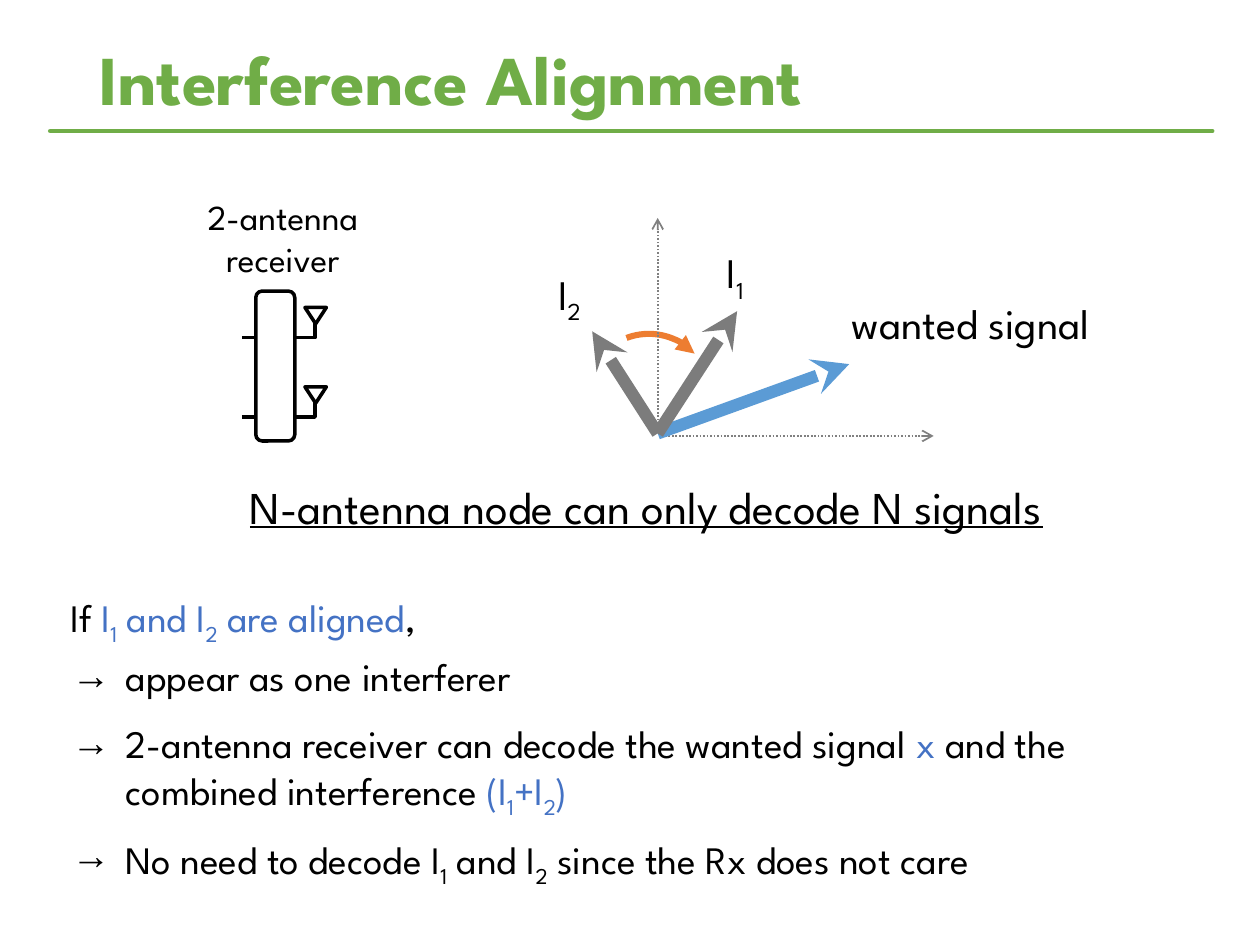
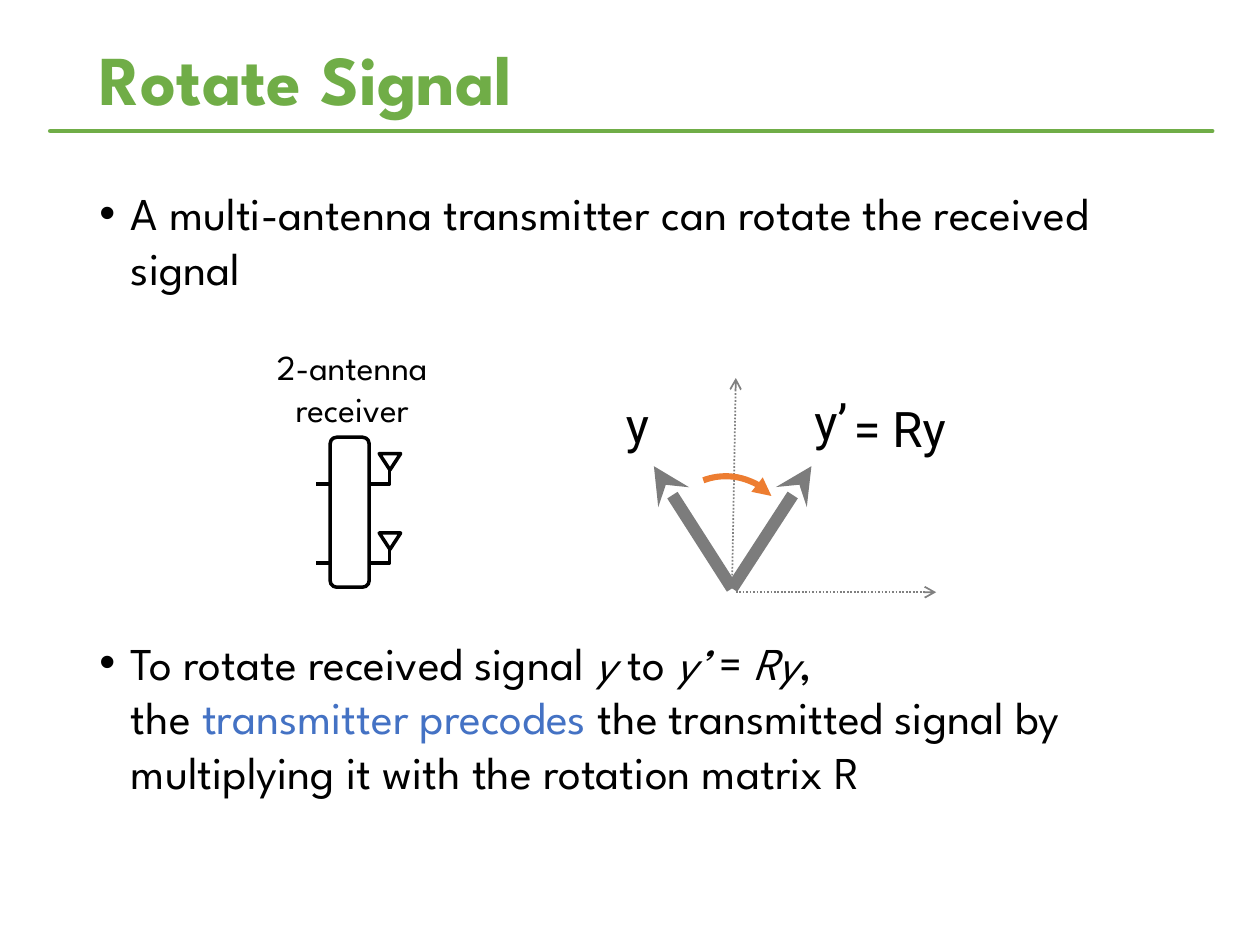
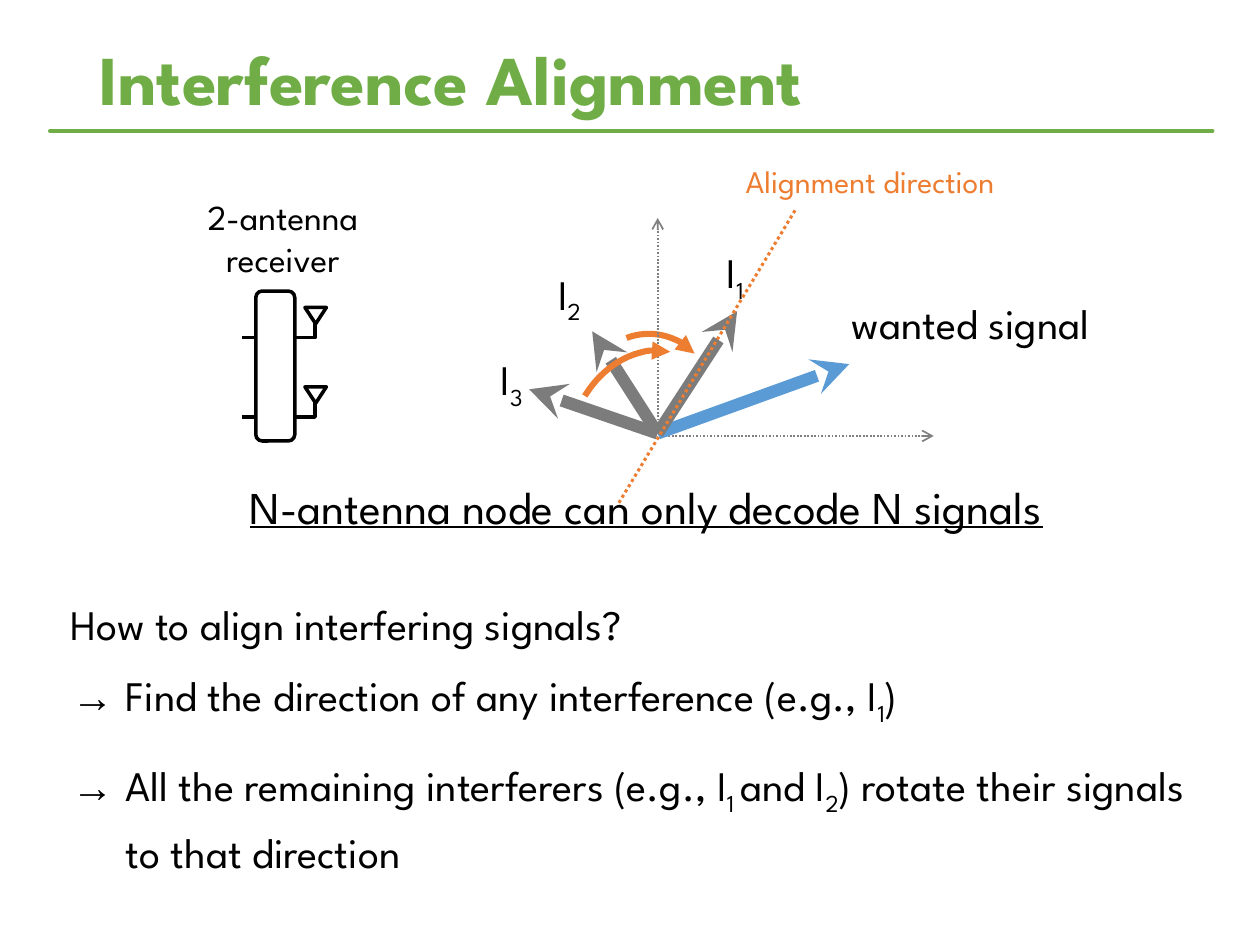
import pptx
import pptx.util
import pptx.dml.color
import pptx.enum.dml
import pptx.enum.shapes
import pptx.enum.text
import pptx.oxml
import pptx.oxml.ns
import lxml.etree

SHAPE = pptx.enum.shapes.MSO_SHAPE
CONNECTOR = pptx.enum.shapes.MSO_CONNECTOR
ALIGN = pptx.enum.text.PP_ALIGN
DOTTED = pptx.enum.dml.MSO_LINE.ROUND_DOT
SPARTAN, ROBOTO = "League Spartan", "Roboto"
GREEN, BLUE, ORANGE, SKY = "70AD47", "4472C4", "ED7D31", "5B9BD5"
BLACK, WHITE, GRAY, AXIS = "000000", "FFFFFF", "7C7C7C", "808080"

CAPACITY = "N-antenna node can only decode N signals"
RECEIVER = "2-antenna\nreceiver"
TEXT_BOX = (0.46, 4.7, 9.19, 2.37)

ALIGNED = [
    dict(runs=["If ", ("I", "blue"), ("1", "blue sub"), (" and I", "blue"), ("2", "blue sub"),
               (" are aligned", "blue"), ","], spacing=0.8),
    dict(runs=["appear as one interferer"], bullet="→", spacing=0.8),
    dict(runs=["2-antenna receiver can decode the wanted signal ", ("x ", "blue"),
               "and the combined interference ", ("(I", "blue"), ("1", "blue sub"),
               ("+I", "blue"), ("2", "blue sub"), (")", "blue")], bullet="→"),
    dict(runs=["No need to decode I", ("1", "sub"), " and I", ("2", "sub"),
               " since the Rx does not care"], bullet="→", spacing=0.8),
]
HOW_TO_ALIGN = [
    dict(runs=["How to align interfering signals?"]),
    dict(runs=["Find the direction of any interference (e.g., I", ("1", "sub"), ")"], bullet="→"),
    dict(runs=["All the remaining interferers (e.g., I", ("1 ", "sub"), "and I", ("2", "sub"),
               ") rotate their signals to that direction"], bullet="→", spacing=1.2),
]
CAN_ROTATE = [dict(runs=["A multi-antenna transmitter can rotate the received signal"], bullet="•")]
PRECODING = [
    dict(runs=["To rotate received signal ", ("y", "italic"), " to ", ("y’", "italic"), " = ",
               ("Ry", "italic"), ", \nthe ", ("transmitter precodes ", "blue"),
               "the transmitted signal by multiplying it with the rotation matrix R"], bullet="•"),
]
INDENTS = {"→": (0.44, -0.43), "•": (0.25, -0.25)}

ORIGIN = (5.22, 3.44)
ALIGN_AXES = [((5.22, 3.42), (5.22, 1.73)), ((5.25, 3.46), (7.41, 3.46))]
ALIGN_VECTORS = [((6.74, 2.89), SKY), ((5.85, 2.47), GRAY), ((4.7, 2.63), GRAY)]
ALIGN_LABELS = [
    (["wanted signal"], (5.99, 2.31, 3.43, 0.83)),
    (["I", ("1", "sub")], (4.9, 1.91, 1.87, 0.83)),
    (["I", ("2", "sub")], (4.02, 2.08, 1, 0.83)),
]
ROTATE_ORIGIN = (5.81, 4.67)
ROTATE_AXES = [((5.81, 4.65), (5.84, 3)), ((5.84, 4.7), (7.43, 4.7))]
ROTATE_TIPS = [(6.44, 3.7), (5.19, 3.7)]
ROTATE_LABELS = [("y’", (5.66, 3.06, 1.87, 0.83)), ("y", (4.56, 3.08, 1, 0.83))]


def rgb(color):
    return pptx.dml.color.RGBColor.from_string(color)


def inches(values):
    return [pptx.util.Inches(v) for v in values]


def sub_element(parent, tag, **attributes):
    return lxml.etree.SubElement(parent, pptx.oxml.ns.qn(tag), **attributes)


def set_line(sp, color, width):
    sp.line.color.rgb = rgb(color)
    sp.line.width = pptx.util.Pt(width)


def add_shape(s, preset, box, color, width, rotation=0):
    sp = s.shapes.add_shape(preset, *inches(box))
    sp.shadow.inherit = False
    sp.rotation = rotation
    set_line(sp, color, width)
    return sp


def add_line(s, start, end, color, width, dash=None, arrow=None, kind=CONNECTOR.STRAIGHT):
    cx = s.shapes.add_connector(kind, *inches(start + end))
    set_line(cx, color, width)
    if dash:
        cx.line.dash_style = dash
    if arrow:
        sub_element(cx.line._get_or_add_ln(), "a:tailEnd", type=arrow)
    sub_element(cx._element.spPr, "a:effectLst")
    return cx


def add_run(p, text, style=""):
    for i, piece in enumerate(text.split("\n")):
        if i:
            p.add_line_break()
        r = p.add_run()
        r.text = piece
        if "blue" in style:
            r.font.color.rgb = rgb(BLUE)
        if "italic" in style:
            r.font.italic = True
        if "sub" in style:
            r.font._element.set("baseline", "-25000")


def fill_paragraph(p, runs, size, font=SPARTAN, color=BLACK, bullet=None, spacing=None,
                   before=12, align=ALIGN.LEFT):
    p.alignment = align
    p.space_before = pptx.util.Pt(before)
    if spacing:
        p.line_spacing = spacing
    if bullet:
        pPr = p._p.get_or_add_pPr()
        left, hanging = inches(INDENTS[bullet])
        pPr.set("marL", str(left))
        pPr.set("indent", str(hanging))
        sub_element(pPr, "a:buFont", typeface="Arial")
        sub_element(pPr, "a:buChar", char=bullet)
    p.font.name, p.font.size = font, pptx.util.Pt(size)
    p.font.color.rgb = rgb(color)
    for run in runs:
        add_run(p, *([run] if isinstance(run, str) else run))


def add_text(s, paragraphs, box, size, wrap=True, **shared):
    tf = s.shapes.add_textbox(*inches(box)).text_frame
    tf.word_wrap = wrap
    for i, paragraph in enumerate(paragraphs):
        p = tf.add_paragraph() if i else tf.paragraphs[0]
        fill_paragraph(p, size=size, **{**shared, **paragraph})
    return tf


def add_label(s, runs, box, size, align=ALIGN.CENTER, **options):
    return add_text(s, [dict(runs=runs)], box, size, align=align, **options)


def add_slide(prs, title):
    s = prs.slides.add_slide(prs.slide_layouts[5])
    rule = add_line(s, (0.4, 1.04), (9.62, 1.04), GREEN, 2.75)
    rule.line._get_or_add_ln().set("cap", "rnd")
    sp = s.shapes.title
    sp.left, sp.top, sp.width, sp.height = inches((0.69, 0.29, 8.62, 0.74))
    tf = sp.text_frame
    tf.auto_size = pptx.enum.text.MSO_AUTO_SIZE.NONE
    tf.vertical_anchor = pptx.enum.text.MSO_ANCHOR.MIDDLE
    p = tf.paragraphs[0]
    fill_paragraph(p, [title], 40, color=GREEN, spacing=0.9, before=0)
    p.font.bold = True
    return s


def add_turn(s, box, rotation):
    arc = add_shape(s, SHAPE.ARC, box, ORANGE, 3.5, rotation)
    arc.adjustments[0], arc.adjustments[1] = 172.3, 212.71
    arc.fill.background()
    sub_element(arc.line._get_or_add_ln(), "a:tailEnd", type="triangle")


def add_receiver(s, left, top, label_at):
    for antenna_top in (top + 0.76, top + 0.13):
        antenna = add_shape(s, SHAPE.ISOSCELES_TRIANGLE, (left + 0.39, antenna_top, 0.17, 0.13),
                            BLACK, 2, 180)
        antenna.fill.solid()
        antenna.fill.fore_color.rgb = rgb(WHITE)
        wire = add_line(s, (left + 0.47, antenna_top + 0.12), (left - 0.11, antenna_top + 0.24),
                        BLACK, 2, kind=CONNECTOR.ELBOW)
        wire._element.spPr.find(pptx.oxml.ns.qn("a:prstGeom")).set("prst", "bentConnector2")
        wire._element.spPr.find(pptx.oxml.ns.qn("a:xfrm")).set("rot", "10800000")
    body = add_shape(s, SHAPE.ROUNDED_RECTANGLE, (left, top, 0.31, 1.19), BLACK, 2)
    body.fill.solid()
    body.fill.fore_color.rgb = rgb(WHITE)
    add_label(s, [RECEIVER], label_at + (2.35, 0.83), 20)


def add_axes(s, axes):
    for start, end in axes:
        add_line(s, start, end, AXIS, 1, DOTTED, "arrow")


def add_vector(s, origin, tip, color=GRAY):
    add_line(s, origin, tip, color, 7, arrow="stealth")


def add_alignment_scene(prs, paragraphs, size):
    s = add_slide(prs, "Interference Alignment")
    add_turn(s, (4.65, 2.65, 1, 1), 322.1)
    add_receiver(s, 2.03, 2.31, (1.07, 1.5))
    capacity = add_label(s, [CAPACITY], (1.17, 3.75, 7.92, 0.83), 26)
    capacity.paragraphs[0].font.underline = True
    add_axes(s, ALIGN_AXES)
    for tip, color in ALIGN_VECTORS:
        add_vector(s, ORIGIN, tip, color)
    for runs, box in ALIGN_LABELS:
        add_label(s, runs, box, 24)
    add_text(s, paragraphs, TEXT_BOX, size)
    return s


def add_rotation_slide(prs):
    s = add_slide(prs, "Rotate Signal")
    add_text(s, CAN_ROTATE, (0.69, 1.42, 8.62, 1.1), 26)
    add_text(s, PRECODING, (0.69, 4.99, 8.62, 1.6), 26)
    add_receiver(s, 2.62, 3.47, (1.62, 2.69))
    add_axes(s, ROTATE_AXES)
    for tip in ROTATE_TIPS:
        add_vector(s, ROTATE_ORIGIN, tip)
    for text, box in ROTATE_LABELS:
        add_label(s, [text], box, 28, font=ROBOTO)
    add_turn(s, (5.26, 3.78, 1, 1), 322.1)
    add_label(s, [" = Ry"], (6.58, 3.11, 1.07, 0.57), 28, ALIGN.LEFT, font=ROBOTO, before=0,
              wrap=False)


def add_direction_slide(prs):
    s = add_alignment_scene(prs, HOW_TO_ALIGN, 24)
    add_vector(s, ORIGIN, (4.2, 3.09))
    add_label(s, ["I", ("3", "sub")], (3.56, 2.76, 1, 0.83), 24)
    add_turn(s, (4.38, 2.91, 1.5, 1.21), 290.2)
    add_line(s, (6.31, 1.67), (4.9, 4.01), ORANGE, 1.75, DOTTED)
    add_label(s, ["Alignment direction"], (5.82, 1.24, 2.61, 0.4), 18, ALIGN.LEFT, color=ORANGE,
              before=0, wrap=False)


def main():
    prs = pptx.Presentation()
    prs.slide_width, prs.slide_height = inches((10, 7.5))
    add_alignment_scene(prs, ALIGNED, 22.2)
    add_rotation_slide(prs)
    add_direction_slide(prs)
    prs.save("out.pptx")


if __name__ == "__main__":
    main()
